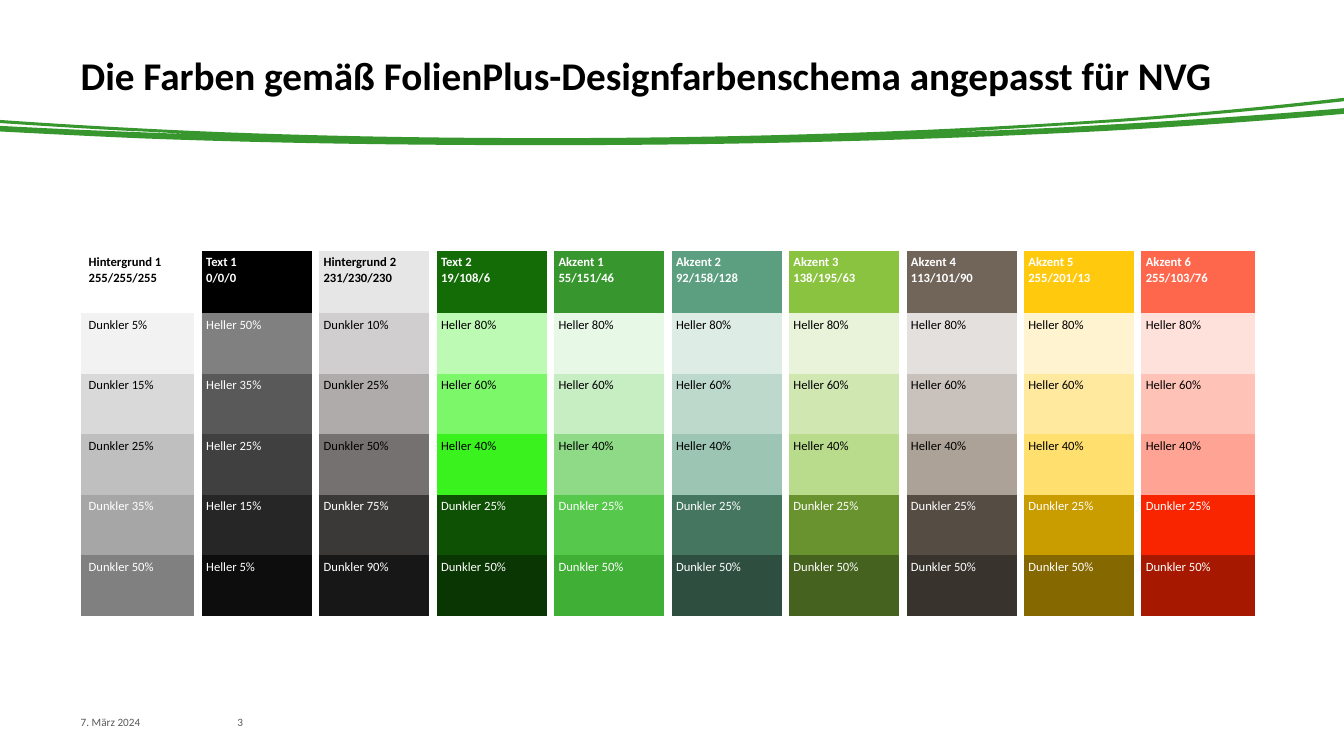
from dataclasses import dataclass

from lxml.etree import SubElement
from pptx import Presentation
from pptx.dml.color import RGBColor as RGB
from pptx.enum.text import MSO_ANCHOR as ANCHOR, PP_ALIGN as ALIGN
from pptx.oxml.ns import qn
from pptx.util import Inches, Pt

TITLE = "Die Farben gemäß FolienPlus-Designfarbenschema angepasst für NVG"
DATE, NUMBER = "7. März 2024", "3"

TINTS = ["Heller 80%", "Heller 60%", "Heller 40%", "Dunkler 25%", "Dunkler 50%"]
# name, variant labels, base colour followed by its five variants
PALETTE = [
    ("Hintergrund 1", ["Dunkler 5%", "Dunkler 15%", "Dunkler 25%", "Dunkler 35%", "Dunkler 50%"],
     "FFFFFF F2F2F2 D9D9D9 BFBFBF A6A6A6 808080"),
    ("Text 1", ["Heller 50%", "Heller 35%", "Heller 25%", "Heller 15%", "Heller 5%"],
     "000000 808080 595959 404040 262626 0D0D0D"),
    ("Hintergrund 2", ["Dunkler 10%", "Dunkler 25%", "Dunkler 50%", "Dunkler 75%", "Dunkler 90%"],
     "E7E6E6 D0CECE AFABAB 767171 3B3838 181717"),
    ("Text 2", TINTS, "136C06 BDFBB4 7BF769 39F21E 0E5104 0A3603"),
    ("Akzent 1", TINTS, "37972E E8F8E7 C7EDC3 8EDA87 56C84B 40AF35"),
    ("Akzent 2", TINTS, "5C9E80 DEECE6 BDD9CC 9CC6B3 457660 2E4F40"),
    ("Akzent 3", TINTS, "8AC33F E8F3D9 D0E7B2 B9DB8C 68932E 45621F"),
    ("Akzent 4", TINTS, "71655A E4E0DD C9C1BB ADA298 554C44 39332D"),
    ("Akzent 5", TINTS, "FFC90D FFF4CF FFE99E FFDF6E C99C00 866800"),
    ("Akzent 6", TINTS, "FF674C FFE1DB FFC2B7 FFA494 F82500 A61900"),
]

# Outline of the two swooshes: one point is a straight line, three are a curve
SWOOSH_START = (15.75, .87)
SWOOSH = [
    [(14.35, 1.05), (12.73, 1.2), (10.94, 1.3)],
    [(9.22, 1.39), (7.35, 1.44), (5.4, 1.44)],
    [(3.99, 1.44), (2.63, 1.42), (1.34, 1.37)],
    [(.01, 1.31), (-1.26, 1.24), (-2.42, 1.14)],
    [(-2.42, 1.08)],
    [(-1.25, 1.18), (.01, 1.26), (1.34, 1.31)],
    [(1.6, 1.32), (1.86, 1.33), (2.12, 1.34)],
    [(1.85, 1.33), (1.58, 1.31), (1.31, 1.3)],
    [(-.03, 1.23), (-1.29, 1.13), (-2.42, 1.01)],
    [(-2.42, .97)],
    [(-1.29, 1.1), (-.03, 1.2), (1.32, 1.27)],
    [(2.62, 1.34), (4, 1.37), (5.43, 1.37)],
    [(7.45, 1.37), (9.37, 1.3), (11.09, 1.18)],
    [(12.88, 1.05), (14.46, .85), (15.74, .62)],
    [(15.75, .65)],
    [(14.47, .89), (12.88, 1.08), (11.09, 1.21)],
    [(10.43, 1.25), (9.74, 1.3), (9.02, 1.33)],
    [(9.68, 1.3), (10.32, 1.28), (10.94, 1.24)],
    [(12.72, 1.14), (14.35, 1), (15.74, .82)],
]


@dataclass(frozen=True)
class Theme:
    font: str = "Calibri"
    black: RGB = RGB(0, 0, 0)
    white: RGB = RGB(255, 255, 255)
    grey: RGB = RGB.from_string("595959")
    green: RGB = RGB.from_string("37972E")
    title: Pt = Pt(28)
    cell: Pt = Pt(9)
    footer: Pt = Pt(8)
    gap: Pt = Pt(6)


T = Theme()
WIDTH, HEIGHT = 13.33, 7.5
LEFT, CONTENT = 0.8, 11.65
TABLE_TOP, HEAD_ROW, ROW = 2.49, 0.62, 0.6
FOOTER_TOP, FOOTER_HEIGHT = 7.03, 0.2
PLAIN_GRID = "{2D5ABB26-0587-4C30-8999-92F81FD0307C}"


def style(p, size, color, bold=False):
    p.font.name, p.font.size, p.font.bold = T.font, size, bold
    p.font.color.rgb = color


def add_text(s, text, box, size, color, anchor, bold=False, align=ALIGN.LEFT):
    tf = s.shapes.add_textbox(*map(Inches, box)).text_frame
    tf.word_wrap, tf.vertical_anchor = True, anchor
    tf.margin_left = tf.margin_right = tf.margin_top = tf.margin_bottom = 0
    p = tf.paragraphs[0]
    p.text, p.alignment = text, align
    style(p, size, color, bold)


def bend(shape, segments):
    """Turn the line segments of each three-point group into one Bézier curve."""
    lines = iter(list(shape._element.iter(qn("a:lnTo"))))
    for segment in segments:
        group = [next(lines) for _ in segment]
        if len(group) == 3:
            curve = SubElement(group[0].getparent(), qn("a:cubicBezTo"))
            group[0].addprevious(curve)
            for line in group:
                curve.append(line[0])
                line.getparent().remove(line)


def add_swoosh(s):
    builder = s.shapes.build_freeform(*map(Inches, SWOOSH_START))
    points = [(Inches(x), Inches(y)) for segment in SWOOSH for x, y in segment]
    builder.add_line_segments(points, close=True)
    swoosh = builder.convert_to_shape()
    bend(swoosh, SWOOSH)
    swoosh.shadow.inherit = False
    swoosh.fill.solid()
    swoosh.fill.fore_color.rgb = T.green
    swoosh.line.fill.background()


def add_gap(cell, side):
    """Draw a white border on side L or R; call before filling the cell."""
    line = SubElement(cell._tc.get_or_add_tcPr(), qn(f"a:ln{side}"), w=str(T.gap))
    fill = SubElement(line, qn("a:solidFill"))
    SubElement(fill, qn("a:srgbClr"), val=str(T.white))


def paint(cell, color):
    if color == T.white:
        cell.fill.background()
    else:
        cell.fill.solid()
        cell.fill.fore_color.rgb = color


def text_color(name, row):
    if row == 0:
        return T.black if name.startswith("Hintergrund") else T.white
    return T.white if row > 3 or name == "Text 1" else T.black


def add_palette(s):
    rows, cols = len(TINTS) + 1, len(PALETTE)
    box = (LEFT, TABLE_TOP, CONTENT, HEAD_ROW + ROW * len(TINTS))
    table = s.shapes.add_table(rows, cols, *map(Inches, box)).table
    table.first_row = table.horz_banding = False
    table._tbl.tblPr.find(qn("a:tableStyleId")).text = PLAIN_GRID
    for i, row in enumerate(table.rows):
        row.height = Inches(ROW if i else HEAD_ROW)
    for j, (name, variants, codes) in enumerate(PALETTE):
        table.columns[j].width = Inches(CONTENT / cols)
        fills = [RGB.from_string(code) for code in codes.split()]
        header = name + "\v" + "/".join(map(str, fills[0]))
        for i, (label, fill) in enumerate(zip([header, *variants], fills)):
            cell = table.cell(i, j)
            if j > 0:
                add_gap(cell, "L")
            if j < cols - 1:
                add_gap(cell, "R")
            paint(cell, fill)
            cell.margin_left = cell.margin_right = Inches(0.08)
            cell.margin_top = cell.margin_bottom = Inches(0.04)
            cell.text = label
            style(cell.text_frame.paragraphs[0], T.cell, text_color(name, i), i == 0)


def main():
    prs = Presentation()
    prs.slide_width, prs.slide_height = Inches(WIDTH), Inches(HEIGHT)
    s = prs.slides.add_slide(prs.slide_layouts[6])
    add_swoosh(s)
    add_text(s, TITLE, (LEFT, 0.37, CONTENT, 0.75), T.title, T.black, ANCHOR.MIDDLE, bold=True)
    add_palette(s)
    add_text(s, DATE, (LEFT, FOOTER_TOP, 1.18, FOOTER_HEIGHT), T.footer, T.grey, ANCHOR.BOTTOM)
    add_text(s, NUMBER, (2.1, FOOTER_TOP, 0.31, FOOTER_HEIGHT), T.footer, T.grey,
             ANCHOR.BOTTOM, align=ALIGN.RIGHT)
    prs.save("out.pptx")


if __name__ == "__main__":
    main()
